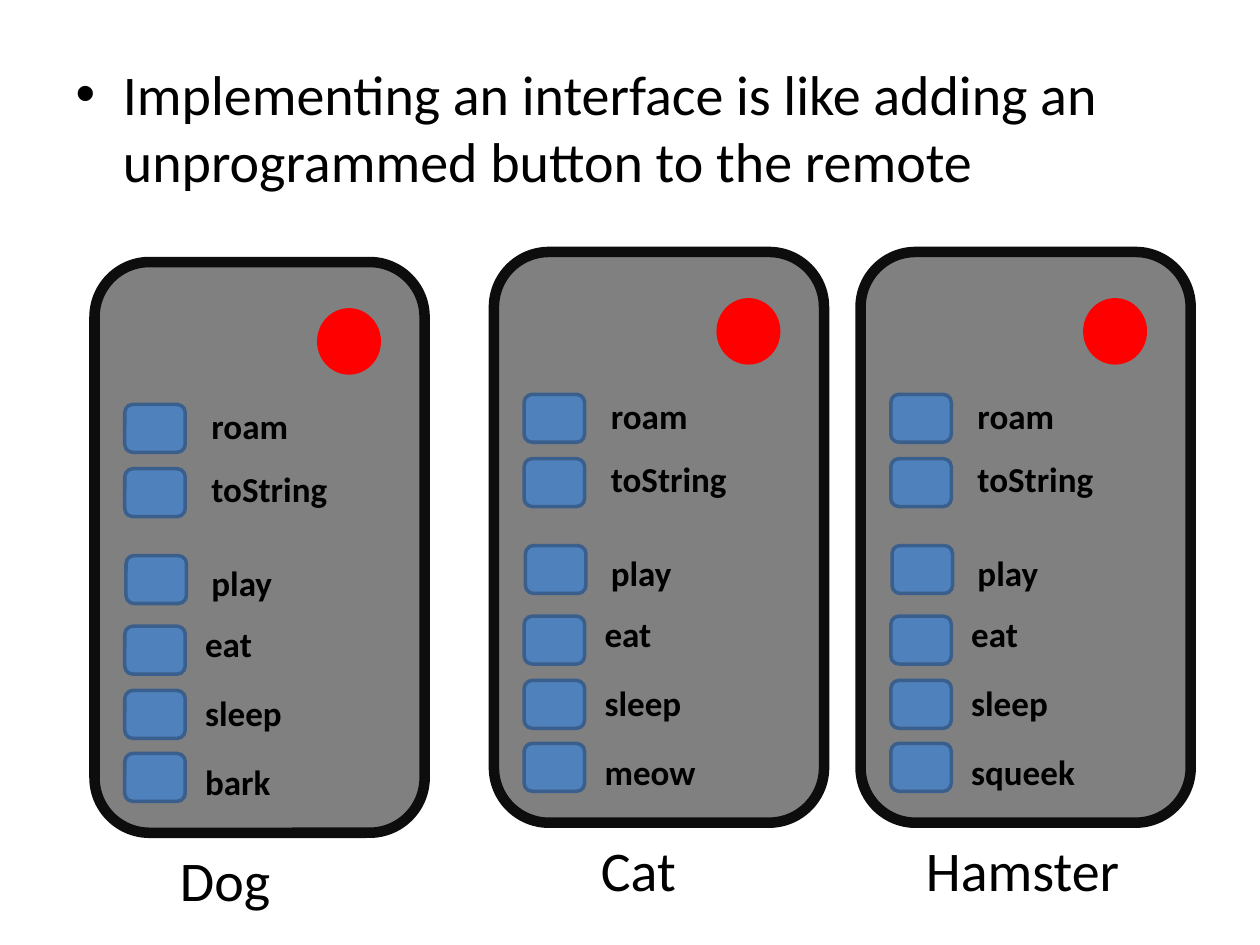
from pptx import Presentation
from pptx.dml.color import RGBColor
from pptx.enum.shapes import MSO_SHAPE
from pptx.enum.text import MSO_AUTO_SIZE
from pptx.util import Inches, Pt

ROUND = MSO_SHAPE.ROUNDED_RECTANGLE
OVAL = MSO_SHAPE.OVAL
GROW = MSO_AUTO_SIZE.SHAPE_TO_FIT_TEXT

FONT = "Calibri"
COLORS = {
    "text": "000000",
    "case": "808080",
    "rim": "0D0D0D",
    "power": "FF0000",
    "key": "4F81BD",
    "edge": "3A5F8C",
}

# Offsets from the corner of a remote: key left, key top, label left, label top
KEYS = [
    ("roam", 0.24, 1.13, 0.83, 1.08),
    ("toString", 0.24, 1.64, 0.83, 1.58),
    ("play", 0.25, 2.33, 0.83, 2.33),
    ("eat", 0.24, 2.89, 0.78, 2.81),
    ("sleep", 0.24, 3.4, 0.78, 3.36),
]
SOUND = (0.24, 3.9, 0.78, 3.91)

# Name, remote left and top, name left and width, own sound
PETS = [
    ("Dog", 0.75, 2.08, 1.33, 1.08, "bark"),
    ("Cat", 3.92, 2, 4.67, 1.08, "meow"),
    ("Hamster", 6.83, 2, 7.25, 2.08, "squeek"),
]


def color(name):
    return RGBColor.from_string(COLORS[name])


def write(frame, text, size=20, bold=False):
    run = frame.paragraphs[0].add_run()
    run.text = text
    font = run.font
    font.name, font.size, font.bold = FONT, Pt(size), bold
    font.color.rgb = color("text")


def add_label(slide, text, left, top, width, height=0.44, **style):
    box = slide.shapes.add_textbox(*map(Inches, (left, top, width, height)))
    frame = box.text_frame
    frame.word_wrap = True
    frame.auto_size = GROW
    write(frame, text, **style)


def add_form(slide, kind, area, fill, line, weight=2):
    form = slide.shapes.add_shape(kind, *map(Inches, area))
    form.shadow.inherit = False
    form.fill.solid()
    form.fill.fore_color.rgb = color(fill)
    form.line.color.rgb = color(line)
    form.line.width = Pt(weight)


def add_remote(slide, left, top, sound):
    add_form(slide, ROUND, (left, top, 2.62, 4.53), "case", "rim", 6)
    add_form(slide, OVAL, (left + 1.78, top + 0.38, 0.48, 0.5), "power", "power")
    for text, key_x, key_y, text_x, text_y in [*KEYS, (sound, *SOUND)]:
        add_form(slide, ROUND, (left + key_x, top + key_y, 0.48, 0.38), "key", "edge")
        width = 1.9 if text == sound else 1.43
        add_label(slide, text, left + text_x, top + text_y, width, bold=True)


def add_body(slide, text):
    title = slide.shapes.title
    title.element.getparent().remove(title.element)
    body = slide.placeholders[1]
    body.left, body.top, body.width, body.height = map(Inches, (0.5, 0.42, 9, 6.28))
    write(body.text_frame, text, size=32)


def main():
    deck = Presentation()
    deck.slide_width, deck.slide_height = Inches(10), Inches(7.5)
    slide = deck.slides.add_slide(deck.slide_layouts[1])
    add_body(slide, "Implementing an interface is like adding an "
                    "unprogrammed button to the remote")
    for name, left, top, name_x, width, sound in PETS:
        add_remote(slide, left, top, sound)
        add_label(slide, name, name_x, top + 4.58, width, 0.64, size=32)
    deck.save("out.pptx")


if __name__ == "__main__":
    main()
